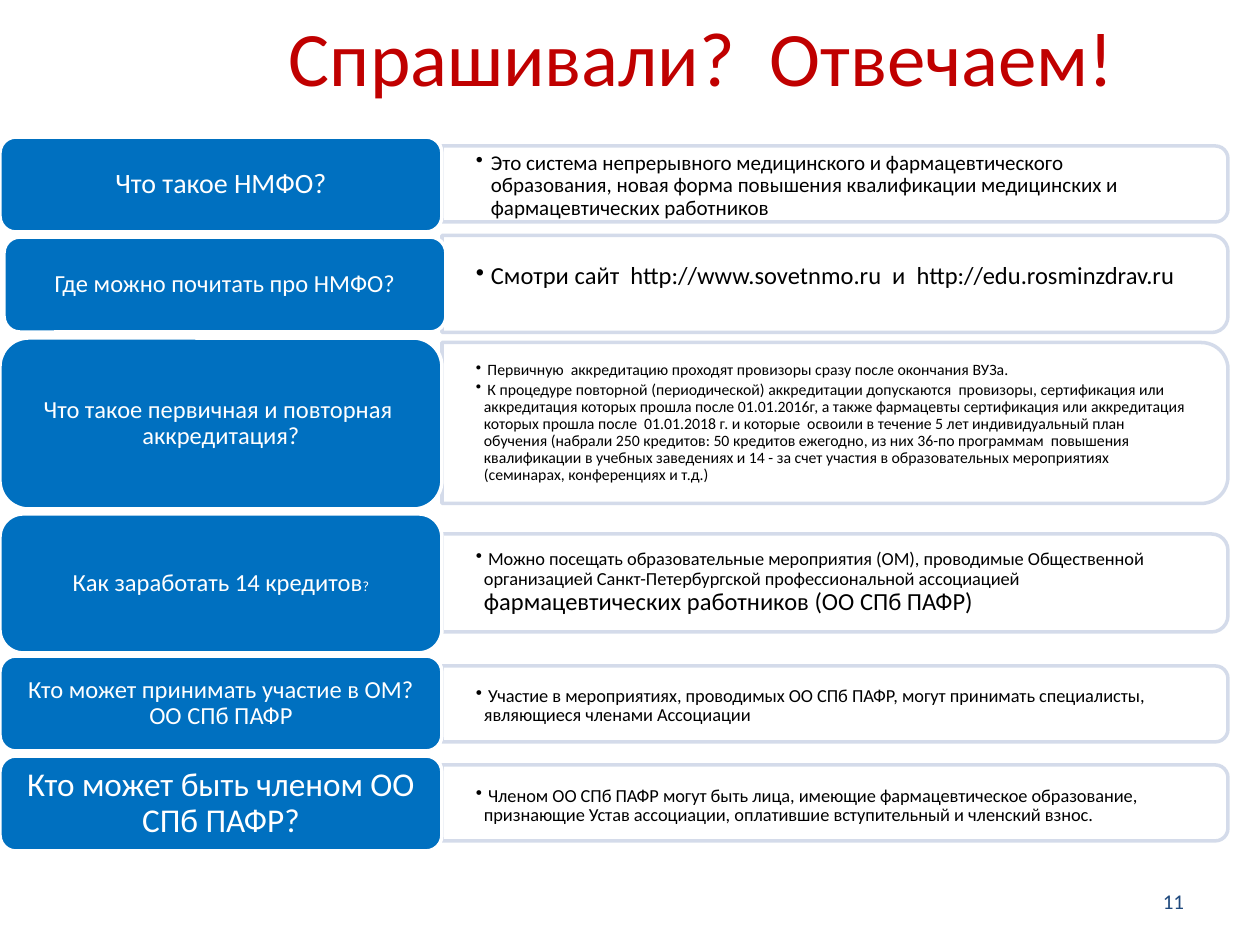
from lxml.etree import SubElement
from pptx import Presentation
from pptx.dml.color import RGBColor
from pptx.enum.shapes import MSO_SHAPE
from pptx.enum.text import MSO_ANCHOR, PP_ALIGN
from pptx.oxml.ns import qn
from pptx.util import Emu, Pt

PX = 914400 // 126
RED = RGBColor(0xC0, 0x00, 0x00)
BLUE = RGBColor(0x00, 0x70, 0xC0)
NAVY = RGBColor(0x1F, 0x49, 0x7D)
PALE = RGBColor(0xD0, 0xD8, 0xE8)
WHITE = RGBColor(0xFF, 0xFF, 0xFF)
BLACK = RGBColor(0x00, 0x00, 0x00)
QUESTION_W = 442
ANSWER_X, ANSWER_W = 442, 786


def px(n):
    return Emu(round(n * PX))


def write(tf, paras, color, align=PP_ALIGN.LEFT, anchor=MSO_ANCHOR.MIDDLE,
          insets=(0, 0, 0, 0), spacing=None, after=0, bullet=0):
    """Write paragraphs, each a list of (text, size) runs; bullet is the hanging indent in px."""
    tf.word_wrap = True
    tf.vertical_anchor = anchor
    tf.margin_left, tf.margin_top, tf.margin_right, tf.margin_bottom = map(px, insets)
    for i, runs in enumerate(paras):
        p = tf.paragraphs[0] if i == 0 else tf.add_paragraph()
        p.alignment = align
        p.space_after = Pt(after)
        if spacing:
            p.line_spacing = spacing
        for text, size in runs:
            r = p.add_run()
            r.text = text
            r.font.name, r.font.size, r.font.color.rgb = "Calibri", Pt(size), color
        if bullet:
            pPr = p._p.get_or_add_pPr()
            pPr.set("marL", str(px(bullet)))
            pPr.set("indent", str(-px(bullet)))
            SubElement(pPr, qn("a:buChar"), char="•")


class Board:
    """Style and current slide."""

    def __init__(self, s):
        self.s = s

    def text(self, x, y, w, h, paras, color, **fmt):
        box = self.s.shapes.add_textbox(px(x), px(y), px(w), px(h))
        write(box.text_frame, paras, color, **fmt)

    def shape(self, kind, x, y, w, h, line):
        sp = self.s.shapes.add_shape(kind, px(x), px(y), px(w), px(h))
        sp.shadow.inherit = False
        sp.line.color.rgb = line
        sp.line.width = Pt(2)
        return sp

    def answer(self, mid, h, shift, indent, paras):
        # A top-rounded bar turned a quarter, so its right side is round
        sp = self.shape(MSO_SHAPE.ROUND_2_SAME_RECTANGLE, ANSWER_X + (ANSWER_W - h) / 2,
                        mid - ANSWER_W / 2, h, ANSWER_W, PALE)
        sp.rotation = 90
        sp.fill.background()
        clr = sp.line._ln.find(".//" + qn("a:srgbClr"))
        SubElement(clr, qn("a:alpha"), val="90000")
        self.text(ANSWER_X, mid - h / 2 + 4 + shift, ANSWER_W - 6, h - 8, paras, BLACK,
                  insets=(34, 0, 34, 0), spacing=0.9, after=1.4, bullet=indent)

    def question(self, x, y, h, runs):
        sp = self.shape(MSO_SHAPE.ROUNDED_RECTANGLE, x, y, QUESTION_W, h, WHITE)
        sp.fill.solid()
        sp.fill.fore_color.rgb = BLUE
        write(sp.text_frame, [runs], WHITE, align=PP_ALIGN.CENTER,
              insets=(14, 8, 14, 8), spacing=0.9)


# Question: x, y, height, runs; answer: middle, height, text shift, indent, paragraphs
ROWS = [
    ((0, 137, 95, [("Что такое НМФО?", 16)]),
     (184, 76, 2, 15, [[("Это система непрерывного медицинского и фармацевтического образования, "
                         "новая форма повышения квалификации медицинских и фармацевтических "
                         "работников", 12)]])),
    ((4, 237, 95, [("Где можно почитать про НМФО?", 14)]),
     (284, 97, -7, 15, [[("Смотри сайт  http://www.sovetnmo.ru  и  "
                          "http://edu.rosminzdrav.ru", 14)]])),
    ((0, 338, 171, [("Что такое первичная и повторная  аккредитация?", 14)]),
     (423, 161, 0, 8, [
         [(" Первичную  аккредитацию проходят провизоры сразу после окончания ВУЗа.", 9)],
         [(" К процедуре повторной (периодической) аккредитации допускаются  провизоры, "
           "сертификация или аккредитация которых прошла после 01.01.2016г, а также фармацевты "
           "сертификация или аккредитация которых прошла после  01.01.2018 г. и которые  освоили "
           "в течение 5 лет индивидуальный план  обучения (набрали 250 кредитов: 50 кредитов "
           "ежегодно, из них 36-по программам  повышения квалификации в учебных заведениях и "
           "14 - за счет участия в образовательных мероприятиях (семинарах, конференциях "
           "и т.д.)", 9)]])),
    ((0, 514, 139, [("Как заработать 14 кредитов", 14), ("?", 8)]),
     (583, 98, 0, 8, [[(" Можно посещать образовательные мероприятия (ОМ), проводимые "
                        "Общественной организацией Санкт-Петербургской профессиональной "
                        "ассоциацией ", 10.5),
                       ("фармацевтических работников (ОО СПб ПАФР)", 14)]])),
    ((0, 656, 95, [("Кто может принимать участие в ОМ? ОО СПб ПАФР", 14)]),
     (704, 76, 2, 8, [[(" Участие в мероприятиях, проводимых ОО СПб ПАФР, могут принимать "
                        "специалисты, являющиеся членами Ассоциации", 10.5)]])),
    ((0, 756, 95, [("Кто может быть членом ОО СПб ПАФР?", 19)]),
     (803, 76, 3, 8, [[(" Членом ОО СПб ПАФР могут быть лица, имеющие фармацевтическое "
                        "образование, признающие Устав ассоциации, оплатившие вступительный и "
                        "членский взнос.", 10.5)]])),
]


def main():
    prs = Presentation()
    prs.slide_width, prs.slide_height = px(1260), px(945)
    board = Board(prs.slides.add_slide(prs.slide_layouts[6]))

    # Title and page number
    board.text(0, 0, 1218, 105, [[("Спрашивали?  Отвечаем!", 44)]], RED,
               align=PP_ALIGN.CENTER, insets=(186, 6, 0, 0))
    board.text(903, 876, 294, 50, [[("11", 12)]], NAVY,
               align=PP_ALIGN.RIGHT, insets=(13, 6, 13, 6))

    # Questions with their answers
    for question, answer in ROWS:
        board.answer(*answer)
        board.question(*question)

    prs.save("out.pptx")


if __name__ == "__main__":
    main()
